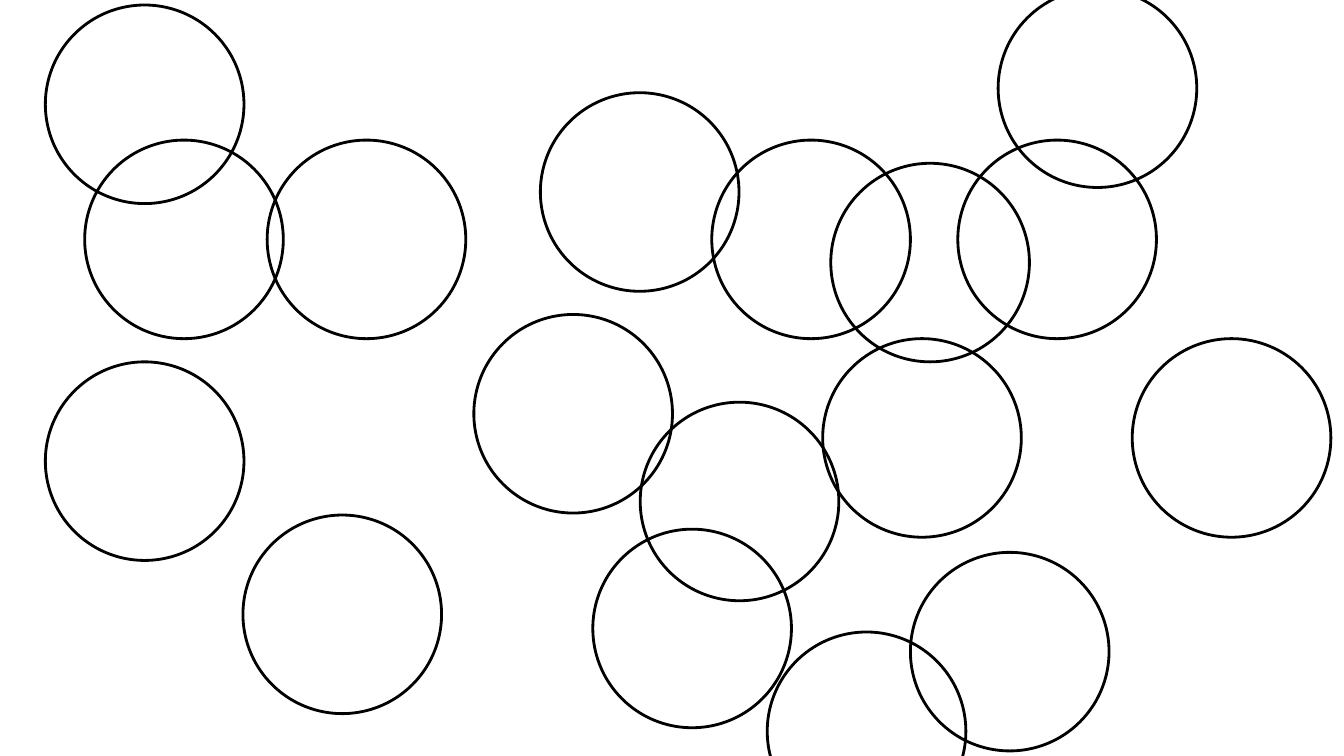
"""Build a slide of equal outlined circles scattered over a white page."""
from typing import NamedTuple

from pptx import Presentation
from pptx.dml.color import RGBColor
from pptx.enum.shapes import MSO_SHAPE
from pptx.slide import Slide
from pptx.util import Inches, Pt

BLACK = RGBColor(0x00, 0x00, 0x00)
DIAMETER = Inches(1.97)


class Circle(NamedTuple):
    left: float
    top: float


CIRCLES = [
    Circle(8.16, 3.36),
    Circle(9.03, 5.48),
    Circle(6.35, 3.99),
    Circle(11.23, 3.36),
    Circle(7.61, 6.27),
    Circle(5.88, 5.25),
    Circle(2.41, 5.11),
    Circle(0.45, 3.59),
    Circle(2.65, 1.39),
    Circle(4.7, 3.12),
    Circle(9.5, 1.39),
    Circle(0.84, 1.39),
    Circle(0.45, 0.05),
    Circle(5.36, 0.92),
    Circle(7.06, 1.39),
    Circle(8.24, 1.62),
    Circle(9.9, -0.11),
]


def draw_circle(s: Slide, circle: Circle) -> None:
    sp = s.shapes.add_shape(
        MSO_SHAPE.OVAL, Inches(circle.left), Inches(circle.top), DIAMETER, DIAMETER
    )
    sp.shadow.inherit = False
    sp.fill.background()
    sp.line.color.rgb = BLACK
    sp.line.width = Pt(2)


def main() -> None:
    prs = Presentation()
    prs.slide_width = Inches(13.33)
    prs.slide_height = Inches(7.5)
    s = prs.slides.add_slide(prs.slide_layouts[6])
    for circle in CIRCLES:
        draw_circle(s, circle)
    prs.save("out.pptx")


if __name__ == "__main__":
    main()
